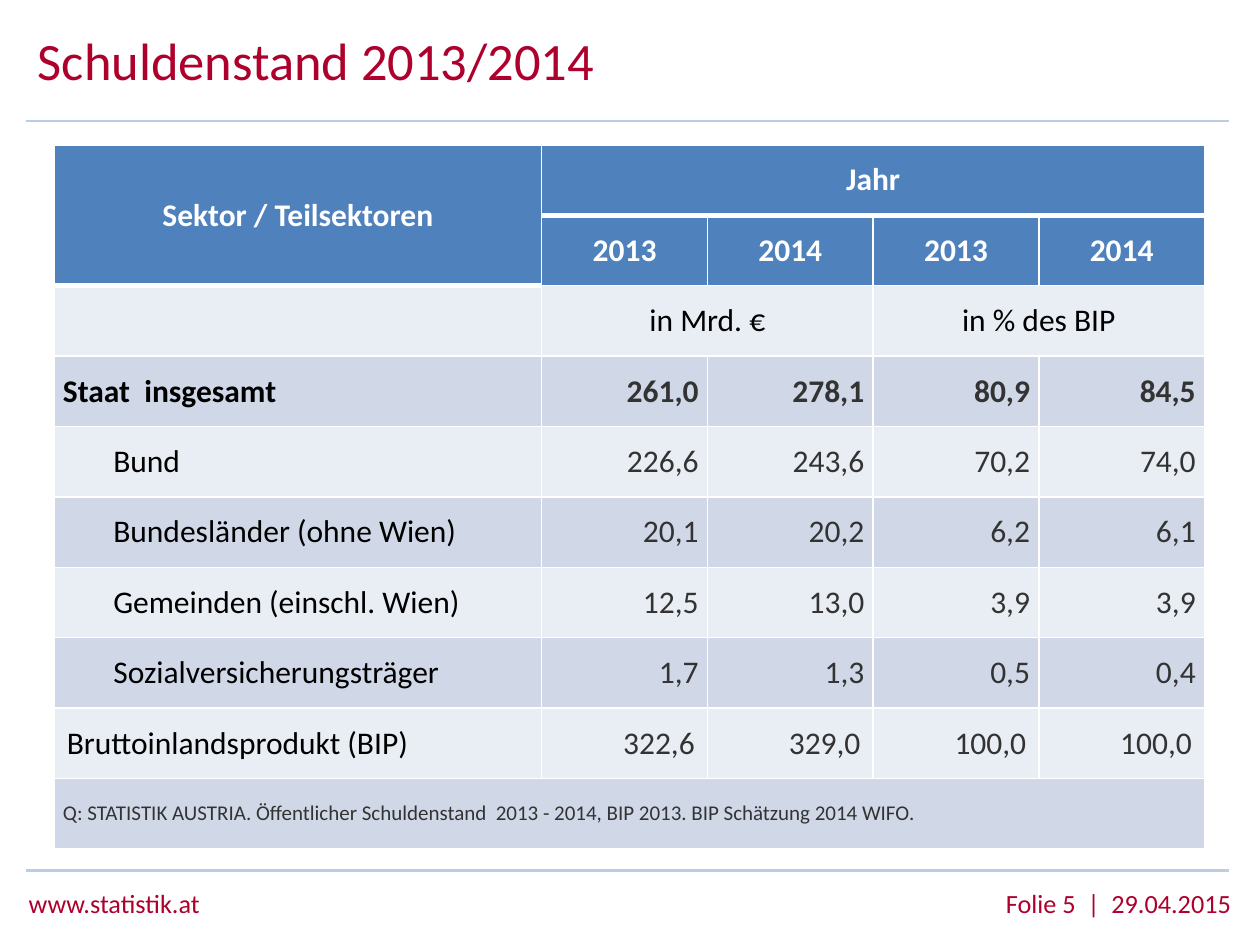
from lxml import etree
from pptx import Presentation
from pptx.dml.color import RGBColor
from pptx.enum import shapes, text
from pptx.oxml import ns
from pptx.util import Inches, Pt

RED = RGBColor(0xAE, 0x00, 0x2C)
RULE = RGBColor(0xB9, 0xCD, 0xE5)
BLUE = RGBColor(0x4F, 0x81, 0xBD)
PALE = RGBColor(0xE9, 0xED, 0xF4)
DEEP = RGBColor(0xD0, 0xD8, 0xE8)
WHITE = RGBColor(0xFF, 0xFF, 0xFF)
BLACK = RGBColor(0x00, 0x00, 0x00)
GREY = RGBColor(0x33, 0x33, 0x33)

LEFT, MID, RIGHT = (text.PP_ALIGN.LEFT, text.PP_ALIGN.CENTER,
                    text.PP_ALIGN.RIGHT)

ROWS = [
    ["Sektor / Teilsektoren", "Jahr"],
    ["", "2013", "2014", "2013", "2014"],
    ["", "in Mrd. €", "", "in % des BIP", ""],
    ["Staat  insgesamt", "261,0", "278,1", "80,9", "84,5"],
    ["Bund", "226,6", "243,6", "70,2", "74,0"],
    ["Bundesländer (ohne Wien)", "20,1", "20,2", "6,2", "6,1"],
    ["Gemeinden (einschl. Wien)", "12,5", "13,0", "3,9", "3,9"],
    ["Sozialversicherungsträger", "1,7", "1,3", "0,5", "0,4"],
    ["Bruttoinlandsprodukt (BIP)", "322,6", "329,0", "100,0", "100,0"],
    ["Q: STATISTIK AUSTRIA. Öffentlicher Schuldenstand  2013 - 2014, "
     "BIP 2013. BIP Schätzung 2014 WIFO."],
]
# First and last cell of each merged block
SPANS = [((0, 0), (1, 0)), ((0, 1), (0, 4)), ((2, 1), (2, 2)),
         ((2, 3), (2, 4)), ((9, 0), (9, 4))]
HEAD, UNIT, TOTAL, PARTS, GDP, NOTE = (0, 1), 2, 3, range(4, 8), 8, 9


def write(frame, words, size, color, align=LEFT, bold=False):
    par = frame.paragraphs[0]
    par.alignment = align
    run = par.add_run()
    run.text = words
    look = {"name": "Calibri", "size": Pt(size), "bold": bold}
    for key, value in look.items():
        setattr(run.font, key, value)
    run.font.color.rgb = color
    return par


def add_title(slide, box):
    title = slide.shapes.title
    title.left, title.top, title.width, title.height = map(Inches, box)
    title.text_frame.vertical_anchor = text.MSO_ANCHOR.MIDDLE
    title.text_frame.auto_size = text.MSO_AUTO_SIZE.NONE
    par = write(title.text_frame, "Schuldenstand 2013/2014", 30, RED)
    par.line_spacing = Pt(30)


def add_rule(slide, left, right, top):
    line = slide.shapes.add_connector(
        shapes.MSO_CONNECTOR.STRAIGHT,
        Inches(left), Inches(top), Inches(right), Inches(top))
    line.line.color.rgb = RULE
    line.line.width = Pt(1.5)
    etree.SubElement(line._element.spPr, ns.qn("a:effectLst"))


def add_foot(slide, box, words, align):
    foot = slide.shapes.add_textbox(*map(Inches, box))
    foot.text_frame.word_wrap = True
    foot.text_frame.auto_size = text.MSO_AUTO_SIZE.SHAPE_TO_FIT_TEXT
    write(foot.text_frame, words, 15, RED, align)


def edge(row, col):
    """Width of the border below a cell: thick under the top headings."""
    return 3 if row == 0 or (row, col) == (1, 0) else 1


def add_edges(cell, row, col):
    props = cell._tc.get_or_add_tcPr()
    sides = {"L": 1, "R": 1, "T": edge(row - 1, col), "B": edge(row, col)}
    for side, width in sides.items():
        line = etree.SubElement(props, ns.qn("a:ln" + side), w=str(Pt(width)))
        fill = etree.SubElement(line, ns.qn("a:solidFill"))
        etree.SubElement(fill, ns.qn("a:srgbClr"), val=str(WHITE))


def style(row, col):
    """Text colour and alignment of a cell."""
    if row in HEAD:
        return WHITE, MID
    if row == UNIT:
        return BLACK, MID
    if row == NOTE:
        return GREY, LEFT
    return (GREY, RIGHT) if col else (BLACK, LEFT)


def fill_cell(cell, row, col, words):
    add_edges(cell, row, col)
    cell.fill.solid()
    cell.fill.fore_color.rgb = (
        BLUE if row in HEAD else DEEP if row % 2 else PALE)
    cell.vertical_anchor = text.MSO_ANCHOR.MIDDLE
    if row != GDP:
        cell.margin_left = cell.margin_right = Inches(0.07)
        cell.margin_top = cell.margin_bottom = 0
    if not words:
        return
    color, align = style(row, col)
    par = write(cell.text_frame, words, 12 if row == NOTE else 18,
                color, align, row in HEAD or row == TOTAL)
    if row in PARTS and col == 0:
        props = par._p.get_or_add_pPr()
        props.set("marL", str(Inches(0.4)))
        props.set("indent", "0")


def add_debts(slide, box, first):
    left, top, width, height = box
    cols = 5
    table = slide.shapes.add_table(
        len(ROWS), cols, *map(Inches, box)).table
    for i, col in enumerate(table.columns):
        col.width = Inches((width - first) / (cols - 1) if i else first)
    for row in table.rows:
        row.height = Inches(height / len(ROWS))
    for r, row in enumerate(ROWS):
        for c in range(cols):
            words = row[c] if c < len(row) else ""
            fill_cell(table.cell(r, c), r, c, words)
    for start, end in SPANS:
        table.cell(*start).merge(table.cell(*end))


def main():
    deck = Presentation()
    deck.slide_width, deck.slide_height = Inches(10), Inches(7.5)
    slide = deck.slides.add_slide(deck.slide_layouts[5])

    # Footer and rules
    add_foot(slide, (0.13, 6.99, 2.27, 0.35), "www.statistik.at", LEFT)
    add_foot(slide, (6.25, 6.99, 3.62, 0.35), "Folie 5  |  29.04.2015", RIGHT)
    for top in (0.96, 6.91):
        add_rule(slide, 0.21, 9.75, top)

    # Title and table
    add_title(slide, (0.2, 0.25, 7.63, 0.53))
    add_debts(slide, (0.43, 1.15, 9.13, 5.59), 3.87)
    deck.save("out.pptx")


if __name__ == "__main__":
    main()
